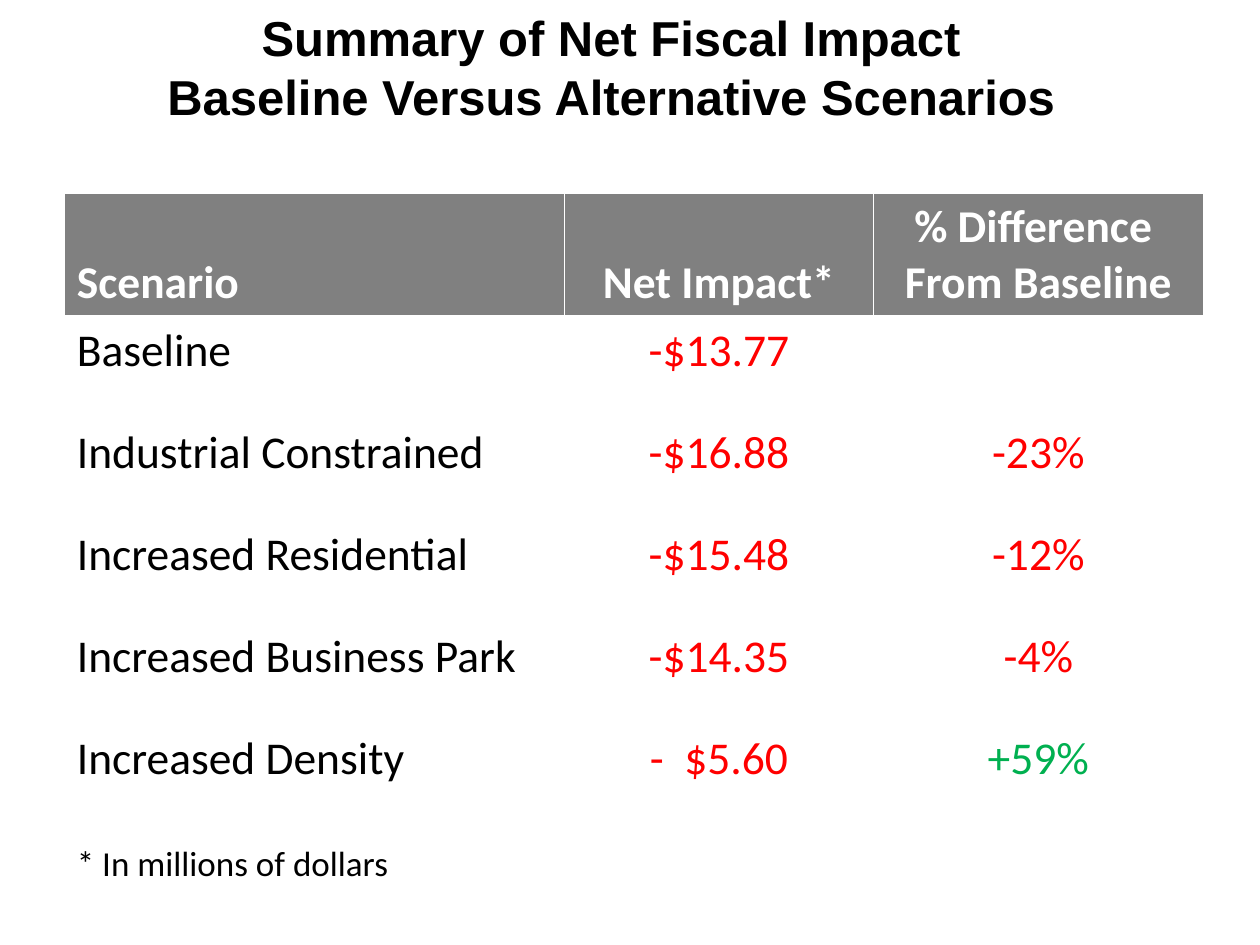
from dataclasses import dataclass

from lxml import etree
from pptx import Presentation
from pptx.dml.color import RGBColor
from pptx.enum.text import MSO_ANCHOR, PP_ALIGN
from pptx.oxml.ns import qn
from pptx.util import Pt

LEFT, CENTER = PP_ALIGN.LEFT, PP_ALIGN.CENTER
TOP, BOTTOM = MSO_ANCHOR.TOP, MSO_ANCHOR.BOTTOM
WHITE, BLACK, GRAY = "FFFFFF", "000000", "808080"
RED, GREEN = "FF0000", "00B050"

COL_WIDTHS = (286, 176.4, 188.6)
HEADER_HEIGHT, ROW_HEIGHT, LAST_HEIGHT = 68.4, 58.3, 101
HEADERS = (("Scenario",), ("Net Impact*",), ("% Difference ", "From Baseline"))


@dataclass
class Scenario:
    name: str
    impact: str
    difference: str = ""
    difference_color: str = RED


SCENARIOS = (
    Scenario("Baseline", "-$13.77"),
    Scenario("Industrial Constrained", "-$16.88", "-23%"),
    Scenario("Increased Residential", "-$15.48", "-12%"),
    Scenario("Increased Business Park", "-$14.35", "-4%"),
    Scenario("Increased Density", "-  $5.60", "+59%", GREEN),
)


def rgb(color: str) -> RGBColor:
    return RGBColor.from_string(color)


def write_paragraph(p, text: str, color: str, align=LEFT, **formats) -> None:
    p.alignment = align
    r = p.add_run()
    r.text = text
    r.font.color.rgb = rgb(color)
    values = {"name": "Calibri", "size": Pt(26), "bold": False} | formats
    for name, value in values.items():
        setattr(r.font, name, value)


def write_lines(tf, lines: tuple, color: str, align=LEFT, **formats) -> None:
    for i, text in enumerate(lines):
        p = tf.add_paragraph() if i else tf.paragraphs[0]
        write_paragraph(p, text, color, align, **formats)


def style_cell(cell, fill: str, anchor, bottom_width: float = 1) -> None:
    cell.vertical_anchor = anchor
    tc_pr = cell._tc.get_or_add_tcPr()
    for side, width in {"L": 1, "R": 1, "T": 1, "B": bottom_width}.items():
        ln = etree.SubElement(tc_pr, qn(f"a:ln{side}"), w=str(Pt(width)))
        solid = etree.SubElement(ln, qn("a:solidFill"))
        etree.SubElement(solid, qn("a:srgbClr"), val=WHITE)
    cell.fill.solid()
    cell.fill.fore_color.rgb = rgb(fill)


def add_title(s) -> None:
    sp = s.shapes.title
    box = {"left": 2.9, "top": 0.7, "width": 692.6, "height": 108.7}
    for name, value in box.items():
        setattr(sp, name, Pt(value))
    tf = sp.text_frame
    tf.vertical_anchor = TOP
    lines = ("Summary of Net Fiscal Impact", "Baseline Versus Alternative Scenarios")
    write_lines(tf, lines, BLACK, CENTER, name="Arial", size=Pt(28), bold=True)


def add_scenario_table(s) -> None:
    heights = [HEADER_HEIGHT] + [ROW_HEIGHT] * (len(SCENARIOS) - 1) + [LAST_HEIGHT]
    table = s.shapes.add_table(
        len(heights), len(COL_WIDTHS), Pt(36.7), Pt(110.2),
        Pt(sum(COL_WIDTHS)), Pt(sum(heights))).table
    for column, width in zip(table.columns, COL_WIDTHS):
        column.width = Pt(width)
    for row, height in zip(table.rows, heights):
        row.height = Pt(height)

    # Header row
    for col, lines in enumerate(HEADERS):
        cell = table.cell(0, col)
        style_cell(cell, GRAY, BOTTOM, bottom_width=3)
        write_lines(cell.text_frame, lines, WHITE, CENTER if col else LEFT, bold=True)

    # Scenario rows
    for row, item in enumerate(SCENARIOS, start=1):
        values = ((item.name, BLACK), (item.impact, RED),
                  (item.difference, item.difference_color))
        for col, (text, color) in enumerate(values):
            cell = table.cell(row, col)
            style_cell(cell, WHITE, TOP)
            if text:
                write_lines(cell.text_frame, (text,), color, CENTER if col else LEFT)

    # Footnote under the last scenario
    p = table.cell(len(SCENARIOS), 0).text_frame.add_paragraph()
    p.space_before = Pt(32)
    write_paragraph(p, "* In millions of dollars", BLACK, size=Pt(20))


def main() -> None:
    prs = Presentation()
    prs.slide_width, prs.slide_height = Pt(720), Pt(540)
    s = prs.slides.add_slide(prs.slide_layouts[5])
    add_title(s)
    add_scenario_table(s)
    prs.save("out.pptx")


if __name__ == "__main__":
    main()
